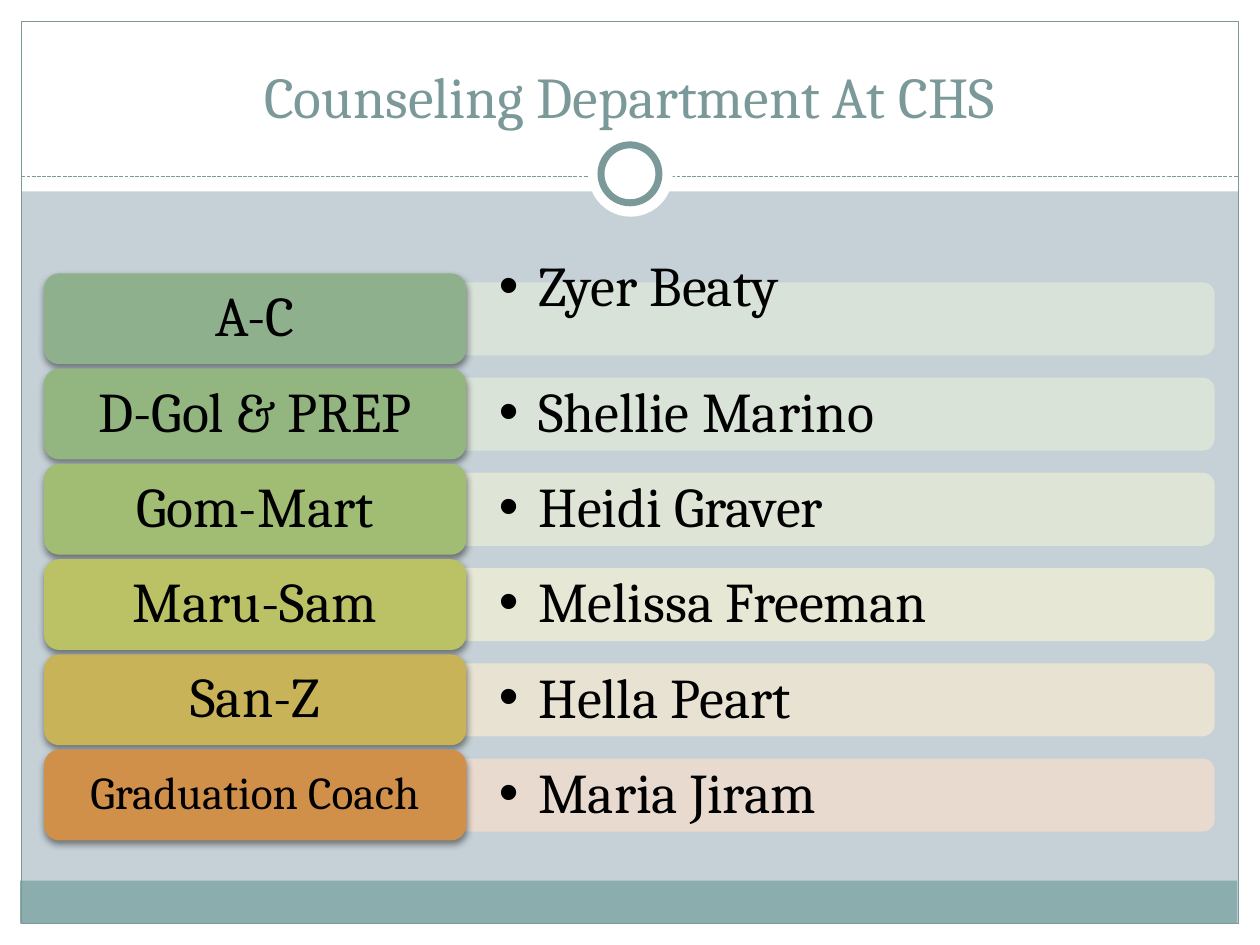
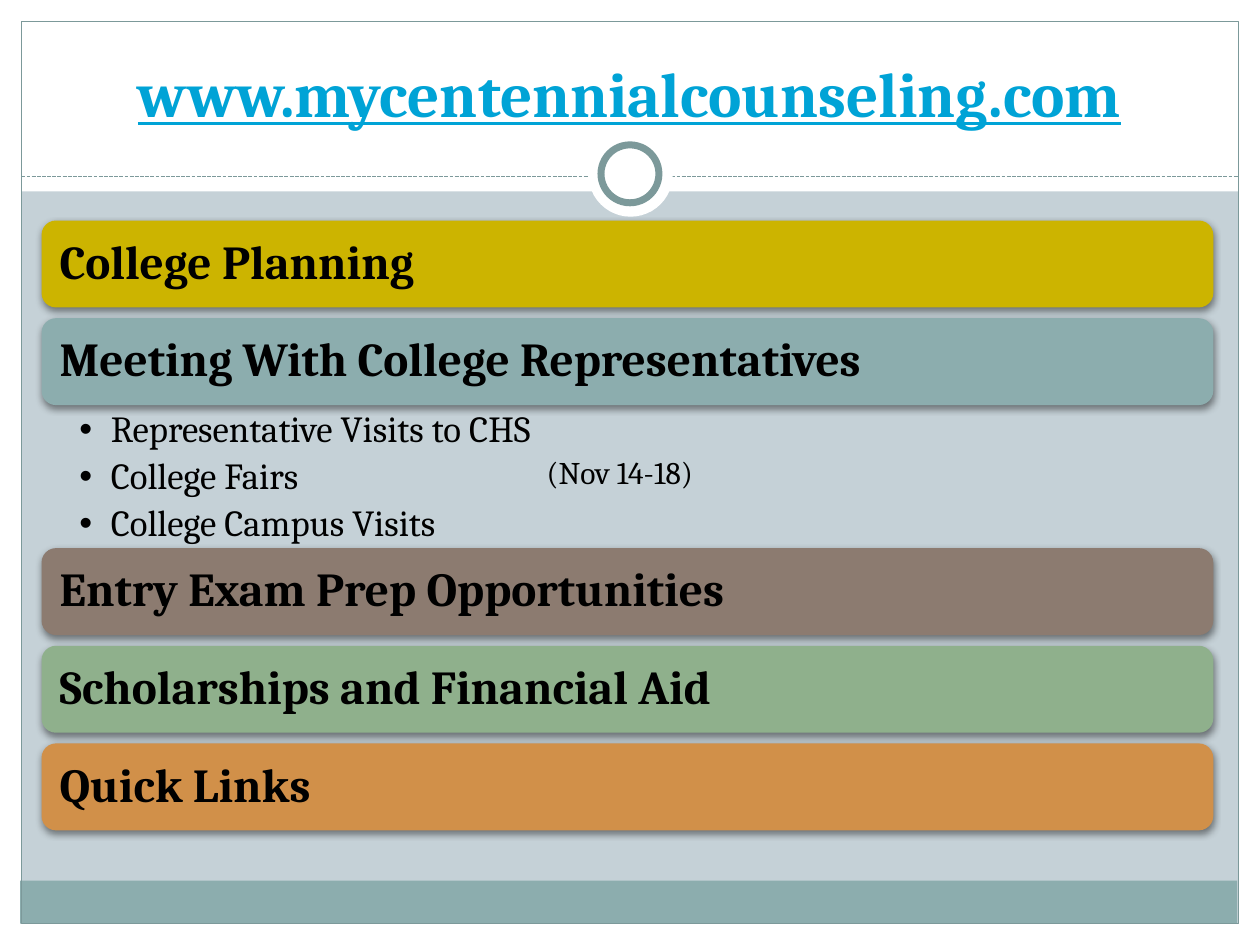
import lxml.etree
import pptx
import pptx.dml.color
import pptx.enum.dml
import pptx.enum.shapes
import pptx.enum.text
import pptx.oxml.ns
import pptx.util

Inches, Pt = pptx.util.Inches, pptx.util.Pt
SHAPE = pptx.enum.shapes.MSO_SHAPE
ANCHOR = pptx.enum.text.MSO_ANCHOR
ALIGN = pptx.enum.text.PP_ALIGN

FONT = "Cambria"
WHITE, BLACK = "FFFFFF", "000000"
BACKDROP, TEAL, TEAL_LINE, LINK = "C5D1D7", "8CADAE", "7C999A", "00A3D6"
SAGE, ORANGE = "8FB08C", "D19049"

COUNSELORS = [  # students, counselor, label colour, strip colour
    ("A-C", "Zyer Beaty", SAGE, "DBE4DA"),
    ("D-Gol & PREP", "Shellie Marino", "93B580", "DDE6D8"),
    ("Gom-Mart", "Heidi Graver", "A1BC73", "E2E8D6"),
    ("Maru-Sam", "Melissa Freeman", "BBC265", "EAEAD4"),
    ("San-Z", "Hella Peart", "C9B358", "ECE4D2"),
    ("Graduation Coach", "Maria Jiram", ORANGE, "EEDBCF"),
]
TOPICS_ABOVE = [
    ("College Planning", "CCB400"),
    ("Meeting With College Representatives", TEAL),
]
TOPICS_BELOW = [
    ("Entry Exam Prep Opportunities", "8C7B70"),
    ("Scholarships and Financial Aid", SAGE),
    ("Quick Links", ORANGE),
]
COLLEGE_MEETINGS = ["Representative Visits to CHS", "College Fairs", "College Campus Visits"]


def rgb(code):
    return pptx.dml.color.RGBColor.from_string(code)


def add_xml(parent, tag, **attributes):
    return lxml.etree.SubElement(parent, pptx.oxml.ns.qn(tag), attributes)


def write(frame, *lines, size, color=BLACK, bold=False, underline=False, align=ALIGN.LEFT,
          anchor=ANCHOR.MIDDLE, insets=(0.1, 0.05, 0.1, 0.05), spacing=1.0, after=0,
          hang=None, wrap=True):
    """Fill a text frame; hang is the bullet indent in inches."""
    frame.word_wrap = wrap
    frame.auto_size = pptx.enum.text.MSO_AUTO_SIZE.NONE
    frame.vertical_anchor = anchor
    (frame.margin_left, frame.margin_top,
     frame.margin_right, frame.margin_bottom) = map(Inches, insets)
    for index, line in enumerate(lines):
        paragraph = frame.add_paragraph() if index else frame.paragraphs[0]
        paragraph.alignment = align
        paragraph.line_spacing = spacing
        paragraph.space_before = Pt(0)
        paragraph.space_after = Pt(after)
        if hang:
            properties = paragraph._p.get_or_add_pPr()
            properties.set("marL", str(Inches(hang)))
            properties.set("indent", str(-Inches(hang)))
            add_xml(properties, "a:buFont", typeface="Arial")
            add_xml(properties, "a:buChar", char="•")
        run = paragraph.add_run()
        run.text = line
        run.font.name, run.font.size = FONT, Pt(size)
        run.font.bold, run.font.underline = bold, underline
        run.font.color.rgb = rgb(color)


class Deck:
    def __init__(self):
        self.presentation = pptx.Presentation()
        self.presentation.slide_width = Inches(10)
        self.presentation.slide_height = Inches(7.5)
        self.slide = None

    def new_slide(self, layout_index, title, **style):
        layout = self.presentation.slide_layouts[layout_index]
        first = self.slide is None
        self.slide = self.presentation.slides.add_slide(layout)
        if first:
            self.frame_master()
        heading = self.slide.shapes.title
        self.place(heading, 0.33, 0.25, 9.33, 0.83)
        write(heading.text_frame, title, align=ALIGN.CENTER, anchor=ANCHOR.BOTTOM, **style)

    def place(self, shape, left, top, width, height):
        shape.left, shape.top = Inches(left), Inches(top)
        shape.width, shape.height = Inches(width), Inches(height)

    def shape(self, kind, left, top, width, height, fill=None, line=None, weight=0.75):
        shape = self.slide.shapes.add_shape(
            kind, Inches(left), Inches(top), Inches(width), Inches(height))
        shape.shadow.inherit = False
        if fill:
            shape.fill.solid()
            shape.fill.fore_color.rgb = rgb(fill)
        else:
            shape.fill.background()
        if line:
            shape.line.color.rgb = rgb(line)
            shape.line.width = Pt(weight)
        else:
            shape.line.fill.background()
        return shape

    def dashed_rule(self, left, right, top, color):
        rule = self.slide.shapes.add_connector(
            pptx.enum.shapes.MSO_CONNECTOR.STRAIGHT,
            Inches(left), Inches(top), Inches(right), Inches(top))
        rule.line.color.rgb = rgb(color)
        rule.line.width = Pt(0.75)
        rule.line.dash_style = pptx.enum.dml.MSO_LINE.SQUARE_DOT
        add_xml(rule.element.spPr, "a:effectLst")
        return rule

    def frame_master(self):
        """Draw the shared frame and move it behind the master's placeholders."""
        master = self.presentation.slide_master
        master.background.fill.solid()
        master.background.fill.fore_color.rgb = rgb(BACKDROP)
        margins = [(0, 7.33, 10, 0.17), (0, 0, 10, 1.52), (0, 0, 0.17, 7.5), (9.83, 0, 0.17, 7.5)]
        parts = [self.shape(SHAPE.RECTANGLE, *box, fill=WHITE) for box in margins]
        parts += [
            self.shape(SHAPE.RECTANGLE, 0.16, 6.99, 9.66, 0.34, fill=TEAL),
            self.shape(SHAPE.RECTANGLE, 0.17, 0.17, 9.66, 7.16, line=TEAL_LINE),
            self.dashed_rule(0.17, 9.83, 1.4, TEAL_LINE),
            self.shape(SHAPE.OVAL, 4.67, 1.05, 0.67, 0.67, fill=WHITE),
            self.shape(SHAPE.OVAL, 4.77, 1.15, 0.46, 0.46, fill=WHITE, line=TEAL_LINE, weight=4),
        ]
        for position, part in enumerate(parts, start=2):
            master.shapes.element.insert(position, part.element)

    def bar(self, text, left, top, width, height, fill, **style):
        """Rounded bar with a soft shadow and its own text."""
        bar = self.shape(SHAPE.ROUNDED_RECTANGLE, left, top, width, height, fill=fill)
        effects = bar.element.spPr.find(pptx.oxml.ns.qn("a:effectLst"))
        shadow = add_xml(effects, "a:outerShdw", blurRad=str(Pt(4)), dist=str(Pt(2)),
                         dir="5400000", rotWithShape="0")
        add_xml(add_xml(shadow, "a:srgbClr", val=BLACK), "a:alpha", val="45000")
        write(bar.text_frame, text, spacing=0.9, **style)

    def strip(self, left, top, width, height, fill):
        """Translucent strip, rounded on its right side only."""
        strip = self.shape(SHAPE.ROUND_2_SAME_RECTANGLE, left + (width - height) / 2,
                           top + (height - width) / 2, height, width, fill=fill)
        strip.rotation = 90
        color = strip.element.spPr.find(".//" + pptx.oxml.ns.qn("a:srgbClr"))
        add_xml(color, "a:alpha", val="90000")

    def text(self, text, left, top, width, height, **style):
        box = self.slide.shapes.add_textbox(
            Inches(left), Inches(top), Inches(width), Inches(height))
        write(box.text_frame, text, **style)

    def bullets(self, lines, left, top, width, height, **style):
        body = self.slide.placeholders[1]
        self.place(body, left, top, width, height)
        write(body.text_frame, *lines, **style)


def counselors_slide(deck):
    deck.new_slide(5, "Counseling Department At CHS", size=33, color=TEAL_LINE)
    first_top, pitch = 2.17, 0.756
    for row, (students, counselor, label_fill, strip_fill) in enumerate(COUNSELORS):
        top = first_top + row * pitch
        deck.strip(3.69, top + 0.07, 5.95, 0.58, strip_fill)
        raised = 0.24 if row == 0 else 0
        deck.text(counselor, 3.69, top + 0.1 - raised, 5.92, 0.52, size=32, spacing=0.9,
                  hang=0.31, insets=(0.27, 0, 0.27, 0))
        deck.bar(students, 0.35, top, 3.35, 0.72, label_fill, align=ALIGN.CENTER,
                 size=26 if students == "Graduation Coach" else 32)


def website_slide(deck):
    deck.new_slide(1, "www.mycentennialcounseling.com", size=36, color=LINK,
                   bold=True, underline=True)
    left, width, pitch = 0.33, 9.3, 0.775
    for first_top, topics in ((1.75, TOPICS_ABOVE), (4.35, TOPICS_BELOW)):
        for row, (topic, fill) in enumerate(topics):
            deck.bar(topic, left, first_top + row * pitch, width, 0.69, fill, size=27,
                     bold=True, insets=(0.11, 0.05, 0.11, 0.05))
    deck.bullets(COLLEGE_MEETINGS, left, 3.22, width, 1.13, size=21, spacing=0.9, after=4.2,
                 hang=0.25, anchor=ANCHOR.TOP, insets=(0.3, 0.04, 0.21, 0.04))
    deck.text("(Nov 14-18)", 4.24, 3.55, 1.51, 0.4, size=18, anchor=ANCHOR.TOP, wrap=False)


def main():
    deck = Deck()
    counselors_slide(deck)
    website_slide(deck)
    deck.presentation.save("out.pptx")


if __name__ == "__main__":
    main()
